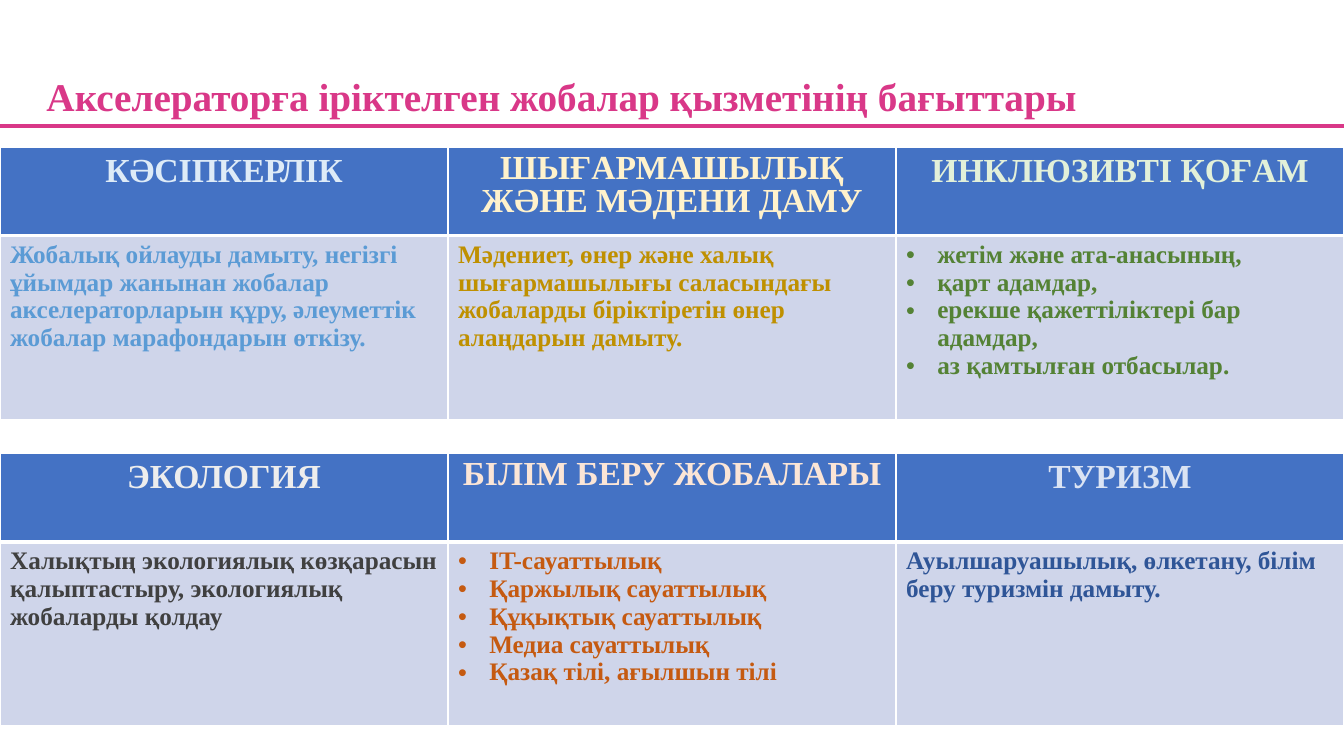
from dataclasses import dataclass

from lxml.etree import SubElement
from pptx import Presentation
from pptx.dml.color import RGBColor
from pptx.enum.shapes import MSO_CONNECTOR
from pptx.enum.text import MSO_ANCHOR, MSO_AUTO_SIZE, PP_ALIGN
from pptx.oxml.ns import qn
from pptx.util import Inches, Pt

GRID_COLUMNS, GRID_ROWS = 48, 60
HEADER_ROWS, BODY_ROWS = 7, 14.6
HEADER_FILL, BODY_FILL, BORDER, ACCENT = "4472C4", "CFD5EA", "FFFFFF", "D93888"


@dataclass
class Direction:
    heading: str
    heading_color: str
    lines: list
    color: str
    bulleted: bool = False


def color(value):
    return RGBColor.from_string(value)


class SlideBuilder:
    """Holds the font, the grid and the current slide."""

    def __init__(self, presentation, font_name):
        self.font_name = font_name
        self.column = presentation.slide_width / GRID_COLUMNS
        self.row = presentation.slide_height / GRID_ROWS
        self.slide = presentation.slides.add_slide(presentation.slide_layouts[5])

    def box(self, left, top, width, height):
        return (int(left * self.column), int(top * self.row),
                int(width * self.column), int(height * self.row))

    def format(self, paragraph, size, text_color):
        font = paragraph.font
        font.name, font.size, font.bold = self.font_name, Pt(size), True
        font.color.rgb = color(text_color)

    def title(self, text, left, top, width, height):
        title = self.slide.shapes.title
        title.left, title.top, title.width, title.height = self.box(left, top, width, height)
        frame = title.text_frame
        frame.text = text
        frame.word_wrap = True
        frame.auto_size = MSO_AUTO_SIZE.NONE
        frame.vertical_anchor = MSO_ANCHOR.MIDDLE
        paragraph = frame.paragraphs[0]
        paragraph.alignment = PP_ALIGN.LEFT
        paragraph.line_spacing = 0.9
        self.format(paragraph, 28, ACCENT)

    def rule(self, top):
        left, y, width, _ = self.box(0, top, GRID_COLUMNS, 0)
        line = self.slide.shapes.add_connector(MSO_CONNECTOR.STRAIGHT, left, y, left + width, y)
        line.line.color.rgb = color(ACCENT)
        line.line.width = Pt(3)
        SubElement(line._element.spPr, qn("a:effectLst"))

    def bullet(self, paragraph):
        properties = paragraph._p.get_or_add_pPr()
        indent = Inches(0.31)
        properties.set("marL", str(indent))
        properties.set("indent", str(-indent))
        SubElement(properties, qn("a:buFont"), typeface="Arial")
        SubElement(properties, qn("a:buChar"), char="•")

    def style_cell(self, cell, fill, top_width, bottom_width):
        properties = cell._tc.get_or_add_tcPr()
        for side, width in (("L", 1), ("R", 1), ("T", top_width), ("B", bottom_width)):
            edge = SubElement(properties, qn(f"a:ln{side}"), w=str(Pt(width)))
            SubElement(SubElement(edge, qn("a:solidFill")), qn("a:srgbClr"), val=BORDER)
        cell.fill.solid()
        cell.fill.fore_color.rgb = color(fill)

    def heading_cell(self, cell, direction, compact):
        self.style_cell(cell, HEADER_FILL, 1, 3)
        cell.text = direction.heading
        paragraph = cell.text_frame.paragraphs[0]
        paragraph.alignment = PP_ALIGN.CENTER
        if compact:
            paragraph.line_spacing = 0.9
            paragraph.space_before = Pt(10)
        self.format(paragraph, 24, direction.heading_color)

    def body_cell(self, cell, direction):
        self.style_cell(cell, BODY_FILL, 3, 1)
        cell.text = "\n".join(direction.lines)
        for paragraph in cell.text_frame.paragraphs:
            if direction.bulleted:
                self.bullet(paragraph)
            self.format(paragraph, 18, direction.color)

    def table(self, directions, top):
        box = self.box(0, top, GRID_COLUMNS, HEADER_ROWS + BODY_ROWS)
        table = self.slide.shapes.add_table(2, len(directions), *box).table
        table.horz_banding = False
        table.rows[0].height = int(HEADER_ROWS * self.row)
        table.rows[1].height = int(BODY_ROWS * self.row)
        for index, direction in enumerate(directions):
            self.heading_cell(table.cell(0, index), direction, compact=index == 1)
            self.body_cell(table.cell(1, index), direction)


SOCIAL = [
    Direction("КӘСІПКЕРЛІК", "DEEBF7",
              ["Жобалық ойлауды дамыту, негізгі ұйымдар жанынан жобалар "
               "акселераторларын құру, әлеуметтік жобалар марафондарын өткізу."], "5B9BD5"),
    Direction("ШЫҒАРМАШЫЛЫҚ ЖӘНЕ МӘДЕНИ ДАМУ", "FFF2CC",
              ["Мәдениет, өнер және халық шығармашылығы саласындағы "
               "жобаларды біріктіретін өнер алаңдарын дамыту."], "BF9000"),
    Direction("ИНКЛЮЗИВТІ ҚОҒАМ", "E2F0D9",
              ["жетім және ата-анасының,", "қарт адамдар,",
               "ерекше қажеттіліктері бар адамдар,", "аз қамтылған отбасылар."],
              "548235", bulleted=True),
]
LEARNING = [
    Direction("ЭКОЛОГИЯ", "EDEDED",
              ["Халықтың экологиялық көзқарасын қалыптастыру, "
               "экологиялық жобаларды қолдау"], "404040"),
    Direction("БІЛІМ БЕРУ ЖОБАЛАРЫ", "FBE5D6",
              ["IT-сауаттылық", "Қаржылық сауаттылық", "Құқықтық сауаттылық",
               "Медиа сауаттылық", "Қазақ тілі, ағылшын тілі"],
              "C55A11", bulleted=True),
    Direction("ТУРИЗМ", "DAE3F3",
              ["Ауылшаруашылық, өлкетану, білім беру туризмін дамыту."], "2F5597"),
]


def main():
    presentation = Presentation()
    presentation.slide_width, presentation.slide_height = Inches(13.33), Inches(7.5)
    builder = SlideBuilder(presentation, "Times New Roman")
    builder.title("Акселераторға іріктелген жобалар қызметінің бағыттары", 1.3, 5, 46.2, 5.7)
    builder.table(SOCIAL, 11.7)
    builder.table(LEARNING, 36)
    builder.rule(10)
    presentation.save("out.pptx")


if __name__ == "__main__":
    main()
